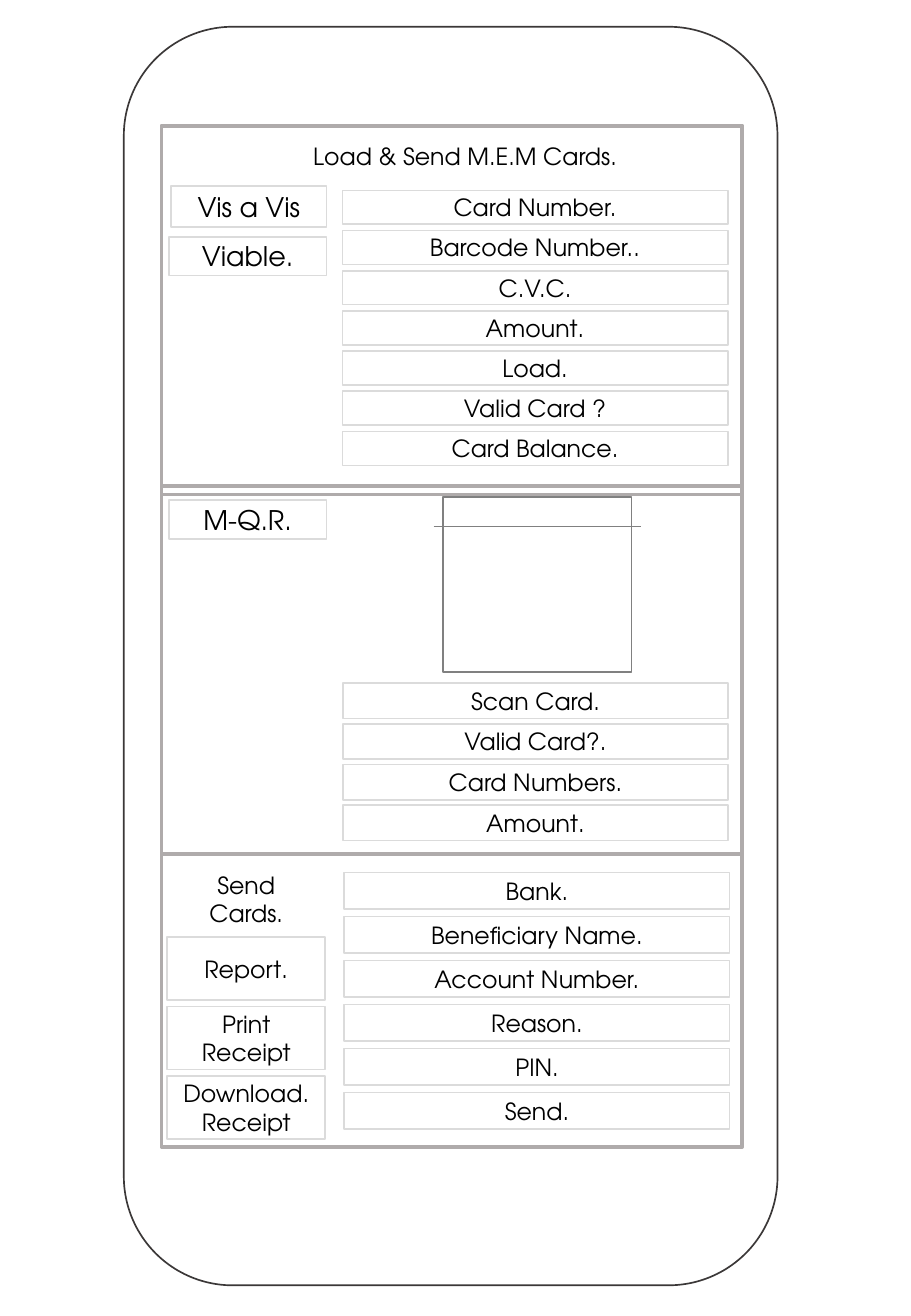
import pptx
import pptx.util
import pptx.dml.color
import pptx.enum.shapes
import pptx.enum.text
from lxml import etree

Cm = pptx.util.Cm
Pt = pptx.util.Pt
RGBColor = pptx.dml.color.RGBColor
Shape = pptx.enum.shapes.MSO_SHAPE

WHITE = RGBColor(0xFF, 0xFF, 0xFF)
BLACK = RGBColor(0x00, 0x00, 0x00)
CHARCOAL = RGBColor(0x3B, 0x38, 0x38)
FRAME_GREY = RGBColor(0xAF, 0xAB, 0xAB)
FIELD_GREY = RGBColor(0xDB, 0xDB, 0xDB)
SCANNER_GREY = RGBColor(0x80, 0x80, 0x80)


class Wireframe:
    font_name = "TeX Gyre Adventor"

    def __init__(self, slide):
        self.slide = slide

    def panel(self, left, top, width, height, line, weight=1, fill=WHITE,
              kind=Shape.RECTANGLE):
        shape = self.slide.shapes.add_shape(
            kind, Cm(left), Cm(top), Cm(width), Cm(height))
        shape.shadow.inherit = False
        if fill is None:
            shape.fill.background()
        else:
            shape.fill.solid()
            shape.fill.fore_color.rgb = fill
        if line is None:
            shape.line.fill.background()
        else:
            shape.line.color.rgb = line
            shape.line.width = Pt(weight)
        return shape

    def label(self, text, left, top, width, height, size=14, line=FIELD_GREY):
        frame = self.panel(left, top, width, height, line).text_frame
        frame.word_wrap = True
        frame.margin_top = frame.margin_bottom = 0
        frame.vertical_anchor = pptx.enum.text.MSO_ANCHOR.MIDDLE
        frame.text = text
        paragraph = frame.paragraphs[0]
        paragraph.alignment = pptx.enum.text.PP_ALIGN.CENTER
        for run in paragraph.runs:
            run.font.name = self.font_name
            run.font.size = Pt(size)
            run.font.color.rgb = BLACK

    def column(self, texts, left, top, width, height, pitch):
        for row, text in enumerate(texts):
            self.label(text, left, top + row * pitch, width, height)

    def rule(self, left, right, y, color, weight):
        line = self.slide.shapes.add_connector(
            pptx.enum.shapes.MSO_CONNECTOR.STRAIGHT,
            Cm(left), Cm(y), Cm(right), Cm(y))
        line.line.color.rgb = color
        line.line.width = Pt(weight)
        etree.SubElement(line._element.spPr, pptx.oxml.ns.qn("a:effectLst"))


def main():
    deck = pptx.Presentation()
    deck.slide_width = Cm(19.05)
    deck.slide_height = Cm(27.51)
    screen = Wireframe(deck.slides.add_slide(deck.slide_layouts[6]))

    screen.panel(2.59, 0.56, 13.67, 26.31, CHARCOAL,
                 kind=Shape.ROUNDED_RECTANGLE)
    screen.panel(3.38, 2.64, 12.14, 21.34, FRAME_GREY, 2.25)
    screen.label("Load & Send M.E.M Cards.", 5.97, 2.95, 7.52, 0.64, line=None)

    screen.label("Vis a Vis", 3.58, 3.89, 3.25, 0.86, size=16)
    screen.label("Viable.", 3.53, 4.95, 3.3, 0.81, size=16)
    load_fields = ["Card Number.", "Barcode Number..", "C.V.C.", "Amount.",
                   "Load.", "Valid Card ?", "Card Balance."]
    screen.column(load_fields, 7.16, 3.98, 8.06, 0.71, 0.84)

    screen.label("M-Q.R.", 3.53, 10.46, 3.3, 0.81, size=16)
    screen.panel(9.27, 10.39, 3.94, 3.66, SCANNER_GREY)
    screen.rule(9.07, 13.41, 11, SCANNER_GREY, 0.5)
    scan_fields = ["Scan Card.", "Valid Card?.", "Card Numbers.", "Amount."]
    screen.column(scan_fields, 7.17, 14.28, 8.06, 0.74, 0.85)

    screen.label("Send\vCards.", 3.5, 18.14, 3.3, 1.32, line=None)
    send_actions = ["Report.", "Print\vReceipt", "Download.\vReceipt"]
    screen.column(send_actions, 3.5, 19.59, 3.3, 1.32, 1.45)
    send_fields = ["Bank.", "Beneficiary Name.", "Account Number.", "Reason.",
                   "PIN.", "Send."]
    screen.column(send_fields, 7.2, 18.24, 8.06, 0.76, 0.92)

    for section_top in (2.64, 10.34):
        screen.panel(3.38, section_top, 12.14, 7.52, FRAME_GREY, 2.25,
                     fill=None)

    deck.save("out.pptx")


if __name__ == "__main__":
    main()
